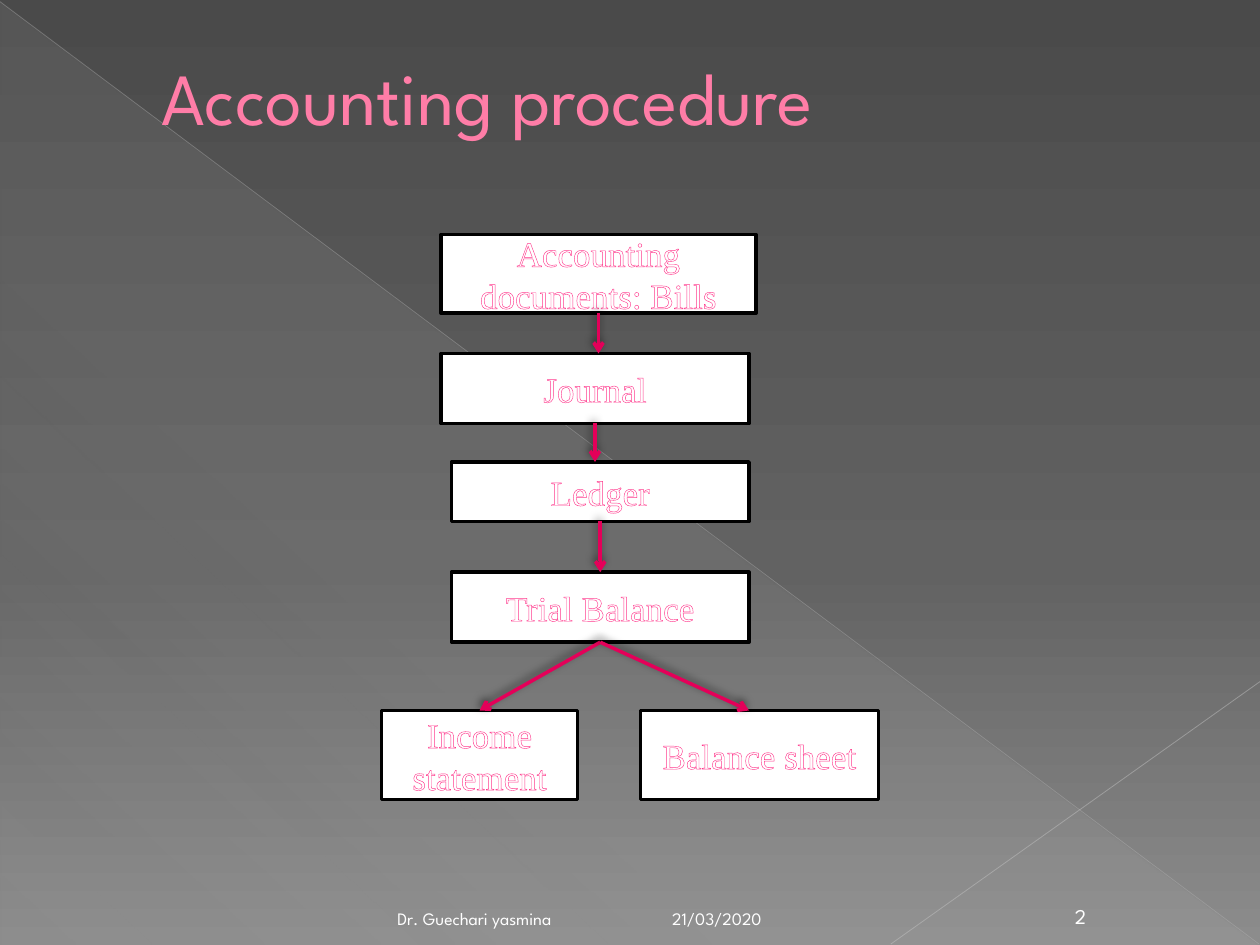
from dataclasses import dataclass

from lxml import etree
from pptx import Presentation
from pptx.dml.color import RGBColor
from pptx.enum.shapes import MSO_CONNECTOR, MSO_SHAPE
from pptx.enum.text import MSO_ANCHOR, PP_ALIGN
from pptx.oxml.ns import qn
from pptx.util import Pt

STRAIGHT = MSO_CONNECTOR.STRAIGHT
RECTANGLE, TRIANGLE = MSO_SHAPE.RECTANGLE, MSO_SHAPE.RIGHT_TRIANGLE
LEFT, CENTER, RIGHT = PP_ALIGN.LEFT, PP_ALIGN.CENTER, PP_ALIGN.RIGHT
MIDDLE, BOTTOM = MSO_ANCHOR.MIDDLE, MSO_ANCHOR.BOTTOM
TOP_SIDE, BOTTOM_SIDE = 0, 2
TITLE_ONLY = 5


@dataclass(frozen=True)
class Theme:
    sans: str = "League Spartan"
    serif: str = "Times New Roman"
    title: str = "FF7DA7"
    title_outline: str = "B12761"
    white: str = "FFFFFF"
    border: str = "000000"
    step_outline: str = "FF388C"
    arrow: str = "E40059"
    background: tuple = ((0, "4A4A4A", 100), (60, "626262", 100), (100, "8C8C8C", 100))
    wedge: tuple = ((0, "D2D2D2", 10), (70, "D2D2D2", 8), (100, "D2D2D2", 1))
    title_size: int = 42
    step_size: int = 20
    number_size: int = 12
    footer_size: int = 10


THEME = Theme()


def add_xml(parent, tag, **attributes):
    child = etree.SubElement(parent, qn(tag))
    for name, value in attributes.items():
        child.set(name, str(value))
    return child


def add_color(parent, color, opacity):
    srgb = add_xml(parent, "a:srgbClr", val=color)
    if opacity < 100:
        add_xml(srgb, "a:alpha", val=opacity * 1000)


def set_gradient(fill, owner, stops, angle):
    """Give fill, held in the XML element owner, clockwise gradient stops."""
    fill.gradient()
    gradient = owner.find(".//" + qn("a:gradFill"))
    stop_list = gradient.find(qn("a:gsLst"))
    for stop in list(stop_list):
        stop_list.remove(stop)
    for position, color, opacity in stops:
        add_color(add_xml(stop_list, "a:gs", pos=position * 1000), color, opacity)
    gradient.find(qn("a:lin")).set("ang", str(angle * 60000))


def write(frame, text, font, size, color, align, anchor, outline=None):
    """Write one paragraph; outline is an optional (colour, width) pair."""
    frame.word_wrap = True
    frame.vertical_anchor = anchor
    paragraph = frame.paragraphs[0]
    paragraph.alignment = align
    run = paragraph.add_run()
    run.text = text
    run.font.name = font
    run.font.size = Pt(size)
    run.font.color.rgb = RGBColor.from_string(color)
    if outline:
        outline_color, width = outline
        properties = run.font._element
        line = add_xml(properties, "a:ln", w=Pt(width))
        add_color(add_xml(line, "a:solidFill"), outline_color, 100)
        properties.insert(0, line)


def add_line(slide, start, end, color, width):
    line = slide.shapes.add_connector(STRAIGHT, *map(Pt, start + end))
    line.line.color.rgb = RGBColor.from_string(color)
    line.line.width = Pt(width)
    effects = add_xml(line._element.spPr, "a:effectLst")
    return line, effects


def add_backdrop(slide):
    set_gradient(slide.background.fill, slide._element, THEME.background, 90)
    wedge = slide.shapes.add_shape(TRIANGLE, Pt(0.5), Pt(1), Pt(719), Pt(539))
    wedge.shadow.inherit = False
    wedge.line.fill.background()
    set_gradient(wedge.fill, wedge._element, THEME.wedge, 133)
    for start, end, color, width, opacity in (
        ((0, 1), (719.5, 539.5), "BFBFBF", 0.39, 35),
        ((720, 389.5), (509, 539.5), "C6C6C6", 0.47, 45),
    ):
        line, _ = add_line(slide, start, end, color, width)
        srgb = line._element.find(".//" + qn("a:srgbClr"))
        add_xml(srgb, "a:alpha", val=opacity * 1000)


def add_title(slide, text):
    title = slide.shapes.title
    slide.shapes._spTree.append(title._element)  # in front of the backdrop
    title.left, title.top, title.width, title.height = map(Pt, (36, 21.5, 648, 67))
    title.text_frame.margin_left = Pt(56)
    write(title.text_frame, text, THEME.sans, THEME.title_size, THEME.title,
          LEFT, MIDDLE, (THEME.title_outline, 0.5))


def add_step(slide, text, left, top, width, height):
    step = slide.shapes.add_shape(RECTANGLE, *map(Pt, (left, top, width, height)))
    step.shadow.inherit = False
    step.fill.solid()
    step.fill.fore_color.rgb = RGBColor.from_string(THEME.white)
    step.line.color.rgb = RGBColor.from_string(THEME.border)
    step.line.width = Pt(2)
    write(step.text_frame, text, THEME.serif, THEME.step_size, THEME.white,
          CENTER, MIDDLE, (THEME.step_outline, 0.8))
    return step


def add_arrow(slide, source, target, end_x=None):
    """Join two steps; with end_x the head meets the target's top off its middle."""
    start_x = (source.left + source.width // 2).pt if hasattr(
        source.left + source.width // 2, "pt") else (source.left + source.width // 2) / Pt(1)
    start = (start_x, (source.top + source.height) / Pt(1))
    end = (start_x if end_x is None else end_x, target.top / Pt(1))
    arrow, effects = add_line(slide, start, end, THEME.arrow, 2)
    arrow.begin_connect(source, BOTTOM_SIDE)
    if abs(Pt(end[0]) - (target.left + target.width // 2)) < Pt(0.5):
        arrow.end_connect(target, TOP_SIDE)
    add_xml(arrow.line._get_or_add_ln(), "a:tailEnd", type="arrow")
    shadow = add_xml(effects, "a:outerShdw", blurRad=Pt(5), dist=Pt(2),
                     dir=245 * 60000, rotWithShape=0)
    add_color(shadow, THEME.border, 50)


def add_footer(slide, text, left, width, size, align, right_inset=7.2):
    box = slide.shapes.add_textbox(Pt(left), Pt(510.5), Pt(width), Pt(24))
    box.text_frame.margin_right = Pt(right_inset)
    write(box.text_frame, text, THEME.sans, size, THEME.white, align, BOTTOM)


def main():
    deck = Presentation()
    deck.slide_width, deck.slide_height = Pt(720), Pt(540)
    slide = deck.slides.add_slide(deck.slide_layouts[TITLE_ONLY])
    add_backdrop(slide)
    add_title(slide, "Accounting procedure")

    documents = add_step(slide, "Accounting documents: Bills", 252, 134, 180, 45)
    journal = add_step(slide, "Journal", 252, 202, 176, 40)
    ledger = add_step(slide, "Ledger", 258, 264, 170, 34)
    trial_balance = add_step(slide, "Trial Balance", 258, 327, 170, 40)
    income = add_step(slide, "Income statement", 218, 406, 112, 51)
    balance_sheet = add_step(slide, "Balance sheet", 366, 406, 136, 51)

    add_arrow(slide, documents, journal)
    add_arrow(slide, journal, ledger)
    add_arrow(slide, ledger, trial_balance)
    add_arrow(slide, trial_balance, income, end_x=274)
    add_arrow(slide, trial_balance, balance_sheet, end_x=428)

    add_footer(slide, "Dr. Guechari yasmina", 36, 336, THEME.footer_size, RIGHT, 57)
    add_footer(slide, "21/03/2020", 377, 168, THEME.footer_size, LEFT)
    add_footer(slide, "2", 598, 39, THEME.number_size, CENTER)
    deck.save("out.pptx")


if __name__ == "__main__":
    main()
